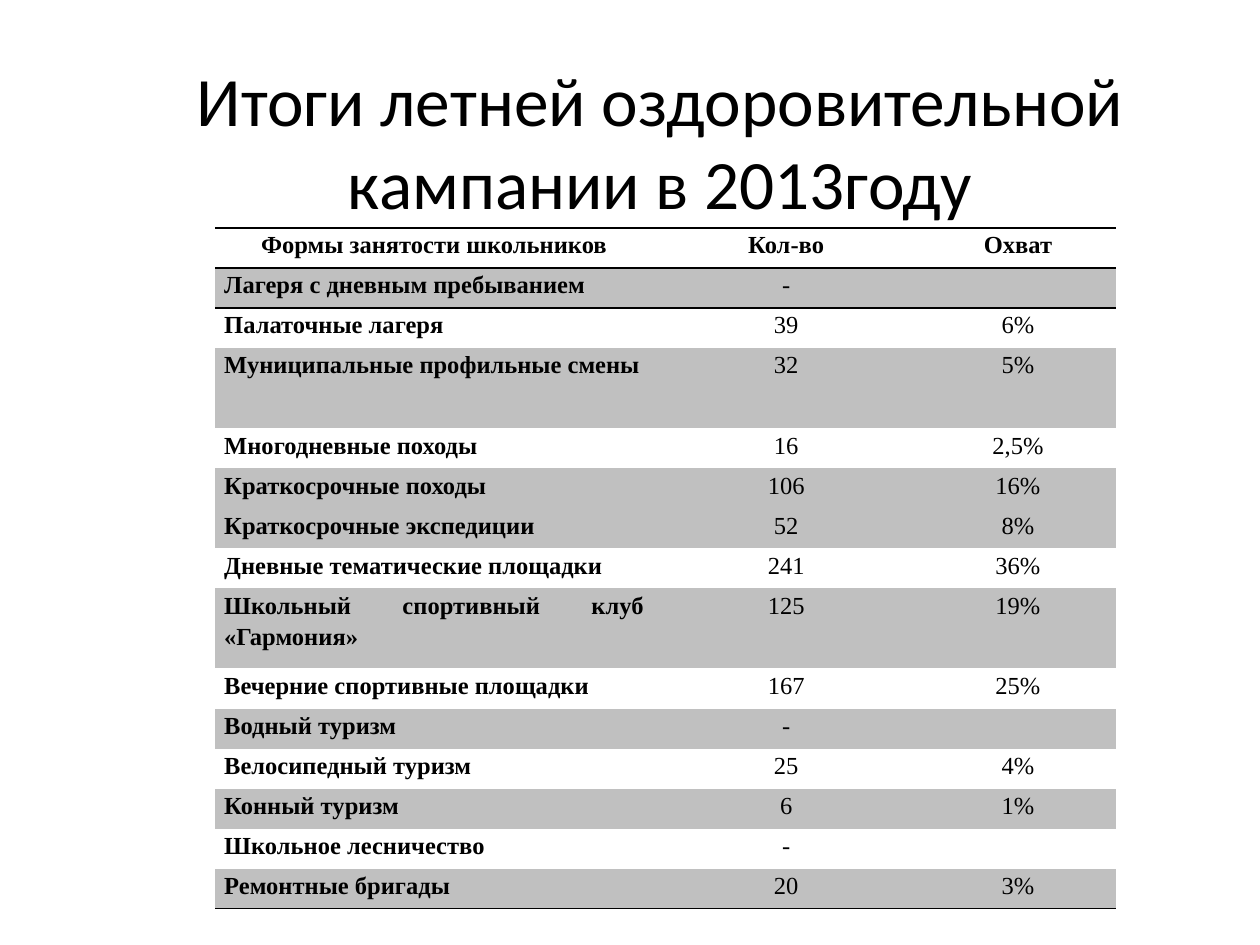
from lxml import etree
from pptx import Presentation
from pptx.dml.color import RGBColor
from pptx.enum import text
from pptx.oxml import ns
from pptx.util import Inches, Pt

TITLE = "Итоги летней оздоровительной кампании в 2013году"
HEADER = ("Формы занятости школьников", "Кол-во", "Охват")
# activity, count, coverage, shaded
ACTIVITIES = [
    ("Лагеря с дневным пребыванием", "-", "", True),
    ("Палаточные лагеря", "39", "6%", False),
    ("Муниципальные профильные смены", "32", "5%", True),
    ("Многодневные походы", "16", "2,5%", False),
    ("Краткосрочные походы", "106", "16%", True),
    ("Краткосрочные экспедиции", "52", "8%", True),
    ("Дневные тематические площадки", "241", "36%", False),
    ("Школьный спортивный клуб «Гармония»", "125", "19%", True),
    ("Вечерние спортивные площадки", "167", "25%", False),
    ("Водный туризм", "-", "", True),
    ("Велосипедный туризм", "25", "4%", False),
    ("Конный туризм", "6", "1%", True),
    ("Школьное лесничество", "-", "", False),
    ("Ремонтные бригады", "20", "3%", True),
]
COLUMN_WIDTHS = (3.47, 2.12, 1.56)
ROW_HEIGHT = 0.318
DOUBLE_ROWS = (3, 8)
BLACK, GREY = "000000", "C0C0C0"
NO_STYLE = "{2D5ABB26-0587-4C30-8999-92F81FD0307C}"
ALIGN = text.PP_ALIGN


def rgb(value):
    return RGBColor.from_string(value)


def format_font(font, **values):
    font.color.rgb = rgb(BLACK)
    for name, value in values.items():
        setattr(font, name, value)


def add_border(cell, side):
    """Draw a 1 pt line on one side ("T" or "B") of a cell."""
    line = etree.SubElement(cell._tc.get_or_add_tcPr(), ns.qn("a:ln" + side), w=str(Pt(1)))
    fill = etree.SubElement(line, ns.qn("a:solidFill"))
    etree.SubElement(fill, ns.qn("a:srgbClr"), val=BLACK)


def fill_cell(cell, value, align, bold, shaded, sides):
    margins = dict(margin_left=0.07, margin_right=0.07, margin_top=0, margin_bottom=0)
    for name, size in margins.items():
        setattr(cell, name, Inches(size))
    for side in sides:
        add_border(cell, side)
    if shaded:
        cell.fill.solid()
        cell.fill.fore_color.rgb = rgb(GREY)
    else:
        cell.fill.background()
    if value:
        p = cell.text_frame.paragraphs[0]
        p.alignment, p.line_spacing = align, 1.15
        r = p.add_run()
        r.text = value
        format_font(r.font, name="Times New Roman", size=Pt(14), bold=bold)


def add_title(s):
    title = s.shapes.title
    title.left, title.top, title.width, title.height = map(Inches, (0.98, 0.68, 8.52, 0.87))
    tf = title.text_frame
    tf.text = TITLE
    tf.auto_size = text.MSO_AUTO_SIZE.NONE
    tf.vertical_anchor = text.MSO_ANCHOR.MIDDLE
    p = tf.paragraphs[0]
    p.alignment = ALIGN.CENTER
    format_font(p.runs[0].font, name="Calibri", size=Pt(39.6))


def add_activity_table(s):
    rows = [(*HEADER, False), *ACTIVITIES]
    heights = [ROW_HEIGHT * (2 if i in DOUBLE_ROWS else 1) for i in range(len(rows))]
    frame = s.shapes.add_table(len(rows), len(HEADER), Inches(1.71), Inches(1.81),
                               Inches(sum(COLUMN_WIDTHS)), Inches(sum(heights)))
    table = frame.table
    table.first_row = table.horz_banding = False
    table._tbl.tblPr.find(ns.qn("a:tableStyleId")).text = NO_STYLE
    for column, width in zip(table.columns, COLUMN_WIDTHS):
        column.width = Inches(width)
    for row, height in zip(table.rows, heights):
        row.height = Inches(height)

    borders = {0: "TB", 1: "T", len(rows) - 1: "B"}
    for i, (*values, shaded) in enumerate(rows):
        for j, value in enumerate(values):
            align = ALIGN.JUSTIFY if i and j == 0 else ALIGN.CENTER
            fill_cell(table.cell(i, j), value, align, i == 0 or j == 0,
                      shaded, borders.get(i, ""))


def main():
    prs = Presentation()
    prs.slide_width, prs.slide_height = Inches(10), Inches(7.5)
    s = prs.slides.add_slide(prs.slide_layouts[5])
    add_title(s)
    add_activity_table(s)
    prs.save("out.pptx")


if __name__ == "__main__":
    main()
